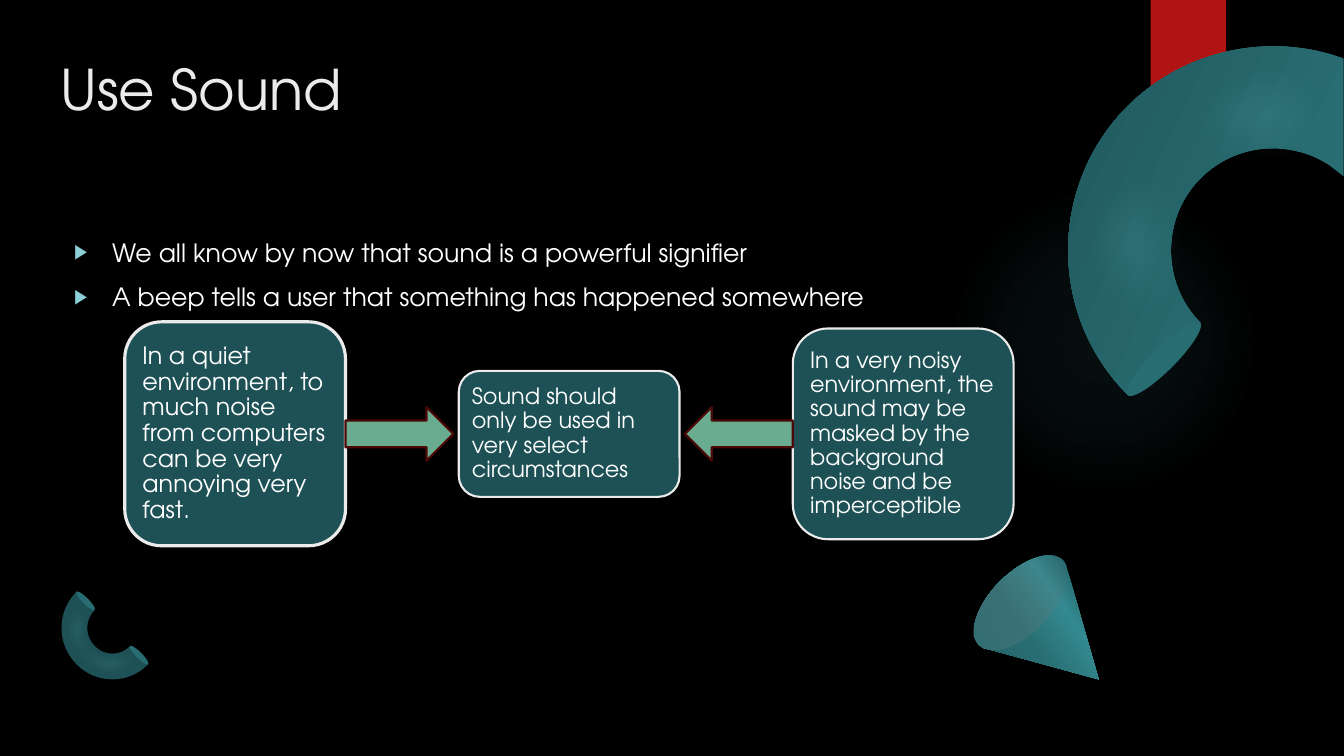
from math import cos, radians, sin

from lxml import etree
from pptx import Presentation
from pptx.dml.color import RGBColor
from pptx.enum import shapes, text
from pptx.oxml import ns
from pptx.util import Pt

FONT = "TeX Gyre Adventor"
TITLE = "Use Sound"
BULLETS = [
    "We all know by now that sound is a powerful signifier",
    "A beep tells a user that something has happened somewhere",
]
CARDS = [
    ("In a quiet environment, to much noise from computers can be very annoying very fast.", 160, 17, 2.25),
    ("Sound should only be used in very select circumstances", 90, 16, 1.5),
    ("In a very noisy environment, the sound may be masked by the background noise and be imperceptible",
     150.5, 16, 1.5),
]
CARD_LEFT, CARD_WIDTH, CARD_PITCH, ROW_CENTER = 89.1, 157.7, 238.6, 309.9
ARROW_WIDTH, ARROW_HEIGHT = 77, 38.2

LARGE_TUBE = [
    (805.7, 282.2), (748.8, 225.4, 748.8, 132.5, 805.7, 75.6), (845.3, 36.7, 901.4, 24.5, 951.1, 38.9),
    (959.8, 41.8), (959.8, 126), (949.7, 118.1), (920.9, 99.4, 882.7, 102.2, 857.5, 127.4),
    (829.4, 155.5, 829.4, 202.3, 857.5, 230.4),
]
LARGE_SHINE = [
    (823.7, 301), (756.7, 234.7, 748.8, 134.6, 805.7, 77), (841.7, 41.8, 894.2, 31.7, 944.6, 44.6),
    (959, 49.7), (959, 131), (957.6, 131), (926.6, 113, 889.2, 114.5, 866.2, 137.5),
    (838.1, 166.3, 841.7, 216, 874.8, 249.8),
]
CONE = [
    (784.8, 485.3), (703.4, 463), (702.7, 463), (701.3, 462.2, 700.6, 461.5, 699.1, 460.1),
    (691.2, 452.2, 697.7, 432, 714.2, 415.4), (730.8, 398.9, 751, 391.7, 759.6, 400.3),
    (760.3, 401, 761, 402.5, 761.8, 403.9), (761.8, 404.6), (784.8, 485.3),
]
SMALL_TUBE = [
    (54.7, 474.5), (40.3, 460.1, 40.3, 437, 54.7, 422.6), (67.7, 435.6),
    (60.5, 442.8, 60.5, 454.3, 67.7, 461.5), (74.2, 468.7, 86.4, 468.7, 92.9, 461.5),
    (105.8, 474.5), (92.2, 488.9, 68.4, 488.9, 54.7, 474.5),
]
SMALL_SHINE = [
    (54.7, 474.5), (40.3, 460.1, 41.8, 435.6, 58.3, 419), (71.3, 432),
    (62.6, 439.9, 61.9, 452.9, 69.1, 459.4), (76.3, 466.6, 88.6, 465.8, 97.2, 457.9),
    (109.4, 470.9), (93.6, 486.7, 68.4, 488.9, 54.7, 474.5),
]
GLOW_STOPS = [(0, "50B9C1", 7), (36, "50B9C1", 6), (69, "50B9C1", 0)]
TUBE_STOPS = [(31, "286D72", 100), (97, "1E5155", 100)]
CONE_STOPS = [(30, "286D72", 100), (40, "33898F", 100), (60, "286D72", 100), (100, "1E5155", 100)]
CONE_BASE_STOPS = [(0, "38979E", 33), (100, "ED5654", 0)]


def color(value):
    return RGBColor.from_string(value)


def add_child(parent, tag, **attributes):
    child = etree.SubElement(parent, ns.qn(tag))
    for name, value in attributes.items():
        child.set(name, str(value))
    return child


def style(shape, fill=None, line=None, line_width=1.5):
    shape.shadow.inherit = False
    if fill:
        shape.fill.solid()
        shape.fill.fore_color.rgb = color(fill)
    if line:
        shape.line.color.rgb = color(line)
        shape.line.width = Pt(line_width)
    else:
        shape.line.fill.background()
    return shape


def add_preset(kind, left, top, width, height, rotation=0, **look):
    shape = slide.shapes.add_shape(kind, Pt(left), Pt(top), Pt(width), Pt(height))
    shape.rotation = rotation
    return style(shape, **look)


def turn(x, y, degrees):
    c, s = cos(radians(degrees)), sin(radians(degrees))
    return x * c - y * s, x * s + y * c


def add_outline(segments, rotation, fill=None):
    points = [turn(100 * x, 100 * y, -rotation)
              for segment in segments for x, y in zip(segment[::2], segment[1::2])]
    builder = slide.shapes.build_freeform(*points[0], scale=Pt(1) / 100)
    builder.add_line_segments(points[1:], close=True)
    shape = builder.convert_to_shape()
    lines = list(shape._element.iter(ns.qn("a:lnTo")))
    for segment in segments[1:]:
        used, lines = lines[:len(segment) // 2], lines[len(segment) // 2:]
        if len(used) == 3:
            curve = etree.Element(ns.qn("a:cubicBezTo"))
            used[0].addprevious(curve)
            for line in used:
                curve.append(line[0])
                line.getparent().remove(line)
    x, y = turn(shape.left + shape.width / 2, shape.top + shape.height / 2, rotation)
    shape.left, shape.top = round(x - shape.width / 2), round(y - shape.height / 2)
    shape.rotation = rotation
    return style(shape, fill=fill)


def set_gradient(shape, stops, angle=None):
    shape.fill.background()
    properties = shape._element.spPr
    gradient = etree.Element(ns.qn("a:gradFill"), rotWithShape="1")
    stop_list = add_child(gradient, "a:gsLst")
    for position, value, alpha in stops:
        stop = add_child(stop_list, "a:gs", pos=position * 1000)
        add_child(add_child(stop, "a:srgbClr", val=value), "a:alpha", val=alpha * 1000)
    if angle is None:
        circle = add_child(gradient, "a:path", path="circle")
        add_child(circle, "a:fillToRect", l=50000, t=50000, r=50000, b=50000)
    else:
        add_child(gradient, "a:lin", ang=angle * 60000, scaled=0)
    properties.replace(properties.find(ns.qn("a:noFill")), gradient)


def soften(shape, alpha, radius):
    properties = shape._element.spPr
    add_child(properties.find(ns.qn("a:solidFill"))[0], "a:alpha", val=alpha * 1000)
    add_child(properties.find(ns.qn("a:effectLst")), "a:softEdge", rad=Pt(radius))


def add_run(paragraph, words, size, value):
    run = paragraph.add_run()
    run.text = words
    run.font.name = FONT
    run.font.size = Pt(size)
    run.font.color.rgb = color(value)


def set_frame(frame, anchor, *margins):
    frame.word_wrap = True
    frame.auto_size = text.MSO_AUTO_SIZE.NONE
    frame.vertical_anchor = anchor
    frame.margin_left, frame.margin_top, frame.margin_right, frame.margin_bottom = map(Pt, margins)


def place(shape, *box):
    shape.left, shape.top, shape.width, shape.height = map(Pt, box)


presentation = Presentation()
presentation.slide_width, presentation.slide_height = Pt(960), Pt(540)
slide = presentation.slides.add_slide(presentation.slide_layouts[1])
slide.background.fill.solid()
slide.background.fill.fore_color.rgb = color("000000")

OVAL = shapes.MSO_SHAPE.OVAL
set_gradient(add_preset(OVAL, 677.5, 131.8, 221.8, 221.8), GLOW_STOPS)
add_preset(shapes.MSO_SHAPE.RECTANGLE, 821.9, 0, 54, 90, fill="B01513")
set_gradient(add_outline(LARGE_TUBE, 315), TUBE_STOPS, 250)
soften(add_outline(LARGE_SHINE, 315, "6DC5CB"), 40, 32)
add_preset(OVAL, 823, 219.6, 16.6, 73.4, 45, fill="286D72")
set_gradient(add_outline(CONE, 135), CONE_STOPS, 10)
set_gradient(add_preset(OVAL, 707.8, 388.1, 42.5, 85, 225), CONE_BASE_STOPS, 90)
add_outline(SMALL_TUBE, 45, "1E5155")
for left, top in [(97.2, 458.6), (59, 419.8)]:
    add_preset(OVAL, left, top, 4.3, 18.7, 135, fill="286D72")
soften(add_outline(SMALL_SHINE, 45, "6DC5CB"), 20, 7)

title, body = slide.placeholders
place(title, 43.2, 39.2, 627, 114.5)
set_frame(title.text_frame, text.MSO_ANCHOR.TOP, 0, 0, 0, 0)
paragraph = title.text_frame.paragraphs[0]
paragraph.alignment = text.PP_ALIGN.LEFT
add_run(paragraph, TITLE, 40, "EBEBEB")

place(body, 45.8, 165.6, 624.2, 313.2)
set_frame(body.text_frame, text.MSO_ANCHOR.TOP, 7.2, 3.6, 7.2, 3.6)
for index, words in enumerate(BULLETS):
    paragraph = body.text_frame.add_paragraph() if index else body.text_frame.paragraphs[0]
    paragraph.space_before = Pt(10 if index else 0)
    properties = paragraph._p.get_or_add_pPr()
    properties.set("marL", str(Pt(27)))
    properties.set("indent", str(-Pt(27)))
    add_child(add_child(properties, "a:buClr"), "a:srgbClr", val="8AD0D6")
    add_child(properties, "a:buSzPct", val=80000)
    add_child(properties, "a:buChar", char="▶")
    add_run(paragraph, words, 18, "FFFFFF")

for index, (words, height, size, line_width) in enumerate(CARDS):
    card = add_preset(shapes.MSO_SHAPE.ROUNDED_RECTANGLE, CARD_LEFT + index * CARD_PITCH,
                      ROW_CENTER - height / 2, CARD_WIDTH, height,
                      fill="1E5155", line="EBEBEB", line_width=line_width)
    set_frame(card.text_frame, text.MSO_ANCHOR.MIDDLE, 5, 5, 5, 5)
    paragraph = card.text_frame.paragraphs[0]
    paragraph.alignment = text.PP_ALIGN.LEFT
    paragraph.line_spacing = 0.9
    add_run(paragraph, words, size, "FFFFFF")

for kind, left in [(shapes.MSO_SHAPE.RIGHT_ARROW, CARD_LEFT + CARD_WIDTH),
                   (shapes.MSO_SHAPE.LEFT_ARROW, CARD_LEFT + 2 * CARD_PITCH - ARROW_WIDTH)]:
    add_preset(kind, left, ROW_CENTER - ARROW_HEIGHT / 2, ARROW_WIDTH, ARROW_HEIGHT,
               fill="6AAC90", line="4D0908")

presentation.save("out.pptx")
